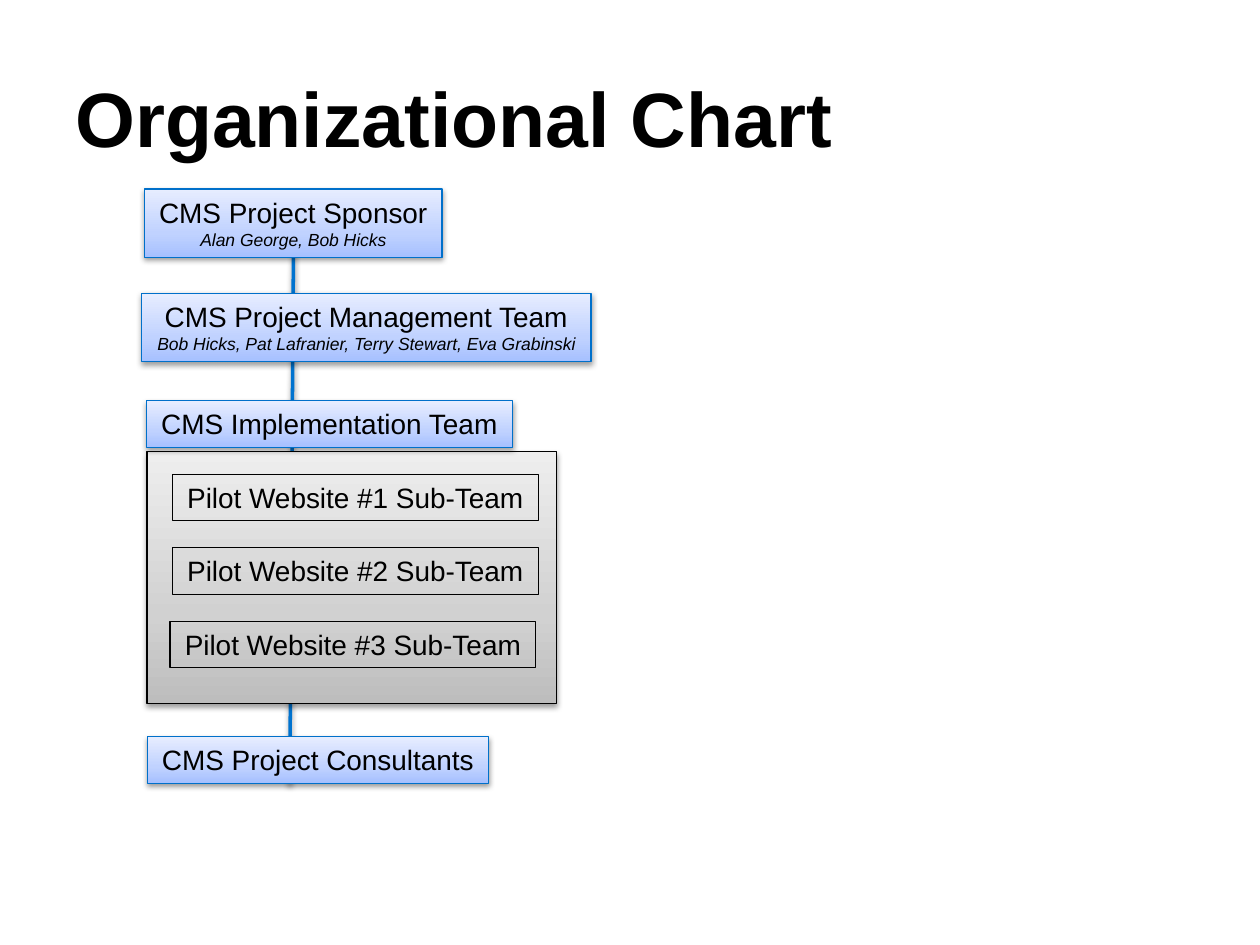
from lxml import etree
from pptx import Presentation
from pptx.dml.color import RGBColor
from pptx.enum.shapes import MSO_CONNECTOR, MSO_SHAPE
from pptx.enum.text import MSO_ANCHOR, MSO_AUTO_SIZE, PP_ALIGN
from pptx.oxml.ns import qn
from pptx.util import Pt

RECT = MSO_SHAPE.RECTANGLE
STRAIGHT = MSO_CONNECTOR.STRAIGHT
TOP, MIDDLE = MSO_ANCHOR.TOP, MSO_ANCHOR.MIDDLE
FIT, FIXED = MSO_AUTO_SIZE.SHAPE_TO_FIT_TEXT, MSO_AUTO_SIZE.NONE
LEFT, CENTER = PP_ALIGN.LEFT, PP_ALIGN.CENTER

TITLE = "Organizational Chart"
TEAMS = [
    ("CMS Implementation Team", "", 83.7, 229, 209),
    ("CMS Project Management Team",
     "Bob Hicks, Pat Lafranier, Terry Stewart, Eva Grabinski", 80.8, 167.6, 257),
    ("CMS Project Sponsor", "Alan George, Bob Hicks", 82.6, 108, 170),
    ("CMS Project Consultants", "", 84.2, 421, 195),
]
PILOTS = [("Pilot Website #1 Sub-Team", 98.6),
          ("Pilot Website #2 Sub-Team", 98.6),
          ("Pilot Website #3 Sub-Team", 97.2)]
PILOT_TOP, PILOT_STEP, PILOT_WIDE = 271, 42, 209
ONE_LINE, TWO_LINES = 26.6, 39

THEME = {
    "font": "Arial", "title": 44, "team": 16, "names": 10,
    "ink": "000000", "edge": "0070CA", "link": "0073CF",
    "blue": ((0, "A6C0FF"), (35, "C0D2FF"), (100, "E7EDFF")),
    "gray": ((0, "BDBDBD"), (35, "D1D1D1"), (100, "EEEEEE")),
}


def node(root, tag, **attrs):
    item = etree.SubElement(root, qn("a:" + tag))
    for key, value in attrs.items():
        item.set(key, str(value))
    return item


def shade(shape):
    props = shape._element.spPr
    effects = props.find(qn("a:effectLst"))
    if effects is None:
        effects = node(props, "effectLst")
    drop = node(effects, "outerShdw", blurRad=Pt(3.1), dist=Pt(1.6),
                dir=5400000, rotWithShape=0)
    color = node(drop, "srgbClr", val=THEME["ink"])
    node(color, "alpha", val=38000)


def blend(shape, stops):
    fill = etree.Element(qn("a:gradFill"), rotWithShape="1")
    chain = node(fill, "gsLst")
    for place, color in stops:
        node(node(chain, "gs", pos=place * 1000), "srgbClr", val=color)
    node(fill, "lin", ang=270 * 60000, scaled=0)
    shape._element.spPr.find(qn("a:prstGeom")).addnext(fill)


def write(frame, text, size, first=False, bold=False, slant=False, align=CENTER):
    line = frame.paragraphs[0] if first else frame.add_paragraph()
    line.alignment = align
    run = line.add_run()
    run.text = text
    font = run.font
    font.name, font.size = THEME["font"], Pt(size)
    font.bold, font.italic = bold, slant
    font.color.rgb = RGBColor.from_string(THEME["ink"])


def box(slide, left, top, wide, high, edge, stops=None):
    shape = slide.shapes.add_shape(RECT, Pt(left), Pt(top), Pt(wide), Pt(high))
    shape.shadow.inherit = False
    shape.line.color.rgb = RGBColor.from_string(edge)
    shape.line.width = Pt(0.75)
    if stops:
        blend(shape, stops)
        shade(shape)
    else:
        shape.fill.background()
    return shape


def label(shape, text, names=""):
    frame = shape.text_frame
    frame.word_wrap = False
    frame.auto_size = FIT
    frame.vertical_anchor = TOP
    write(frame, text, THEME["team"], first=True)
    if names:
        write(frame, names, THEME["names"], slant=True)


def main():
    deck = Presentation()
    deck.slide_width, deck.slide_height = Pt(720), Pt(540)
    slide = deck.slides.add_slide(deck.slide_layouts[6])

    link = slide.shapes.add_connector(STRAIGHT, Pt(167.8), Pt(129.6),
                                      Pt(165.6), Pt(447.8))
    link.line.color.rgb = RGBColor.from_string(THEME["link"])
    link.line.width = Pt(2)
    shade(link)

    head = slide.shapes.add_textbox(Pt(36), Pt(21.6), Pt(648), Pt(90)).text_frame
    head.word_wrap = True
    head.auto_size = FIXED
    head.vertical_anchor = MIDDLE
    write(head, TITLE, THEME["title"], first=True, bold=True, align=LEFT)

    box(slide, 84, 258, 234, 144, THEME["ink"], THEME["gray"])
    for text, names, left, top, wide in TEAMS:
        high = TWO_LINES if names else ONE_LINE
        label(box(slide, left, top, wide, high, THEME["edge"], THEME["blue"]),
              text, names)
    for row, (text, left) in enumerate(PILOTS):
        top = PILOT_TOP + row * PILOT_STEP
        label(box(slide, left, top, PILOT_WIDE, ONE_LINE, THEME["ink"]), text)

    deck.save("out.pptx")


if __name__ == "__main__":
    main()
